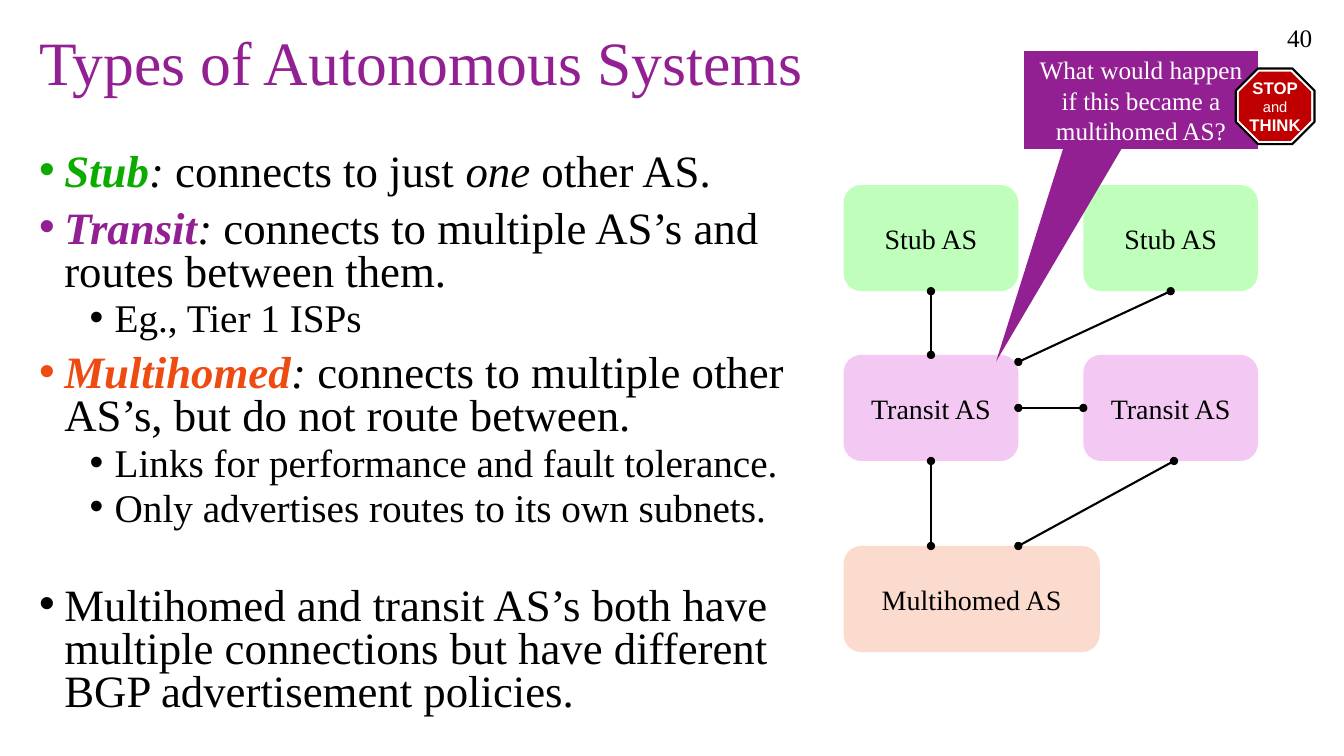
from pptx import Presentation
from pptx.dml.color import RGBColor
from pptx.enum import shapes, text
from pptx.oxml.ns import qn
from pptx.util import Pt
from lxml import etree

COLORS = {
    "black": "000000", "white": "FFFFFF", "purple": "932092",
    "green": "0CAB00", "orange": "ED4B11", "red": "C00000",
    "stub": "C0FFBB", "transit": "F3C9F3", "multihomed": "FCDBCF",
}
SERIF, SANS = "Times New Roman", "Arial"
SHAPE = shapes.MSO_SHAPE
ALIGN = text.PP_ALIGN

# (level, space before, runs); a run is (text, colour, bold, italic)
BULLETS = [
    (0, 10, [("Stub", "green", True, True), (":", "black", False, True),
             (" connects to just ", "black", False, False),
             ("one", "black", False, True),
             (" other AS.", "black", False, False)]),
    (0, 10, [("Transit", "purple", True, True), (": ", "black", False, True),
             ("connects to multiple AS’s and routes between them.",
              "black", False, False)]),
    (1, 5, [("Eg., Tier 1 ISPs", "black", False, False)]),
    (0, 10, [("Multihomed", "orange", True, True), (": ", "black", False, True),
             ("connects to multiple other AS’s, but do not route between.",
              "black", False, False)]),
    (1, 5, [("Links for performance and fault tolerance.",
             "black", False, False)]),
    (1, 5, [("Only advertises routes to its own subnets.",
             "black", False, False)]),
    (0, 41, [("Multihomed and transit AS’s both have multiple connections "
              "but have different BGP advertisement policies.",
              "black", False, False)]),
]


def rgb(name):
    return RGBColor.from_string(COLORS[name])


def add_run(p, words, size, color="black", bold=False, italic=False, font=SERIF):
    r = p.add_run()
    r.text = words
    f = r.font
    f.name, f.size, f.bold, f.italic = font, Pt(size), bold, italic
    f.color.rgb = rgb(color)


def add_textbox(s, box, anchor=text.MSO_ANCHOR.MIDDLE):
    tf = s.shapes.add_textbox(*map(Pt, box)).text_frame
    tf.word_wrap = True
    tf.vertical_anchor = anchor
    return tf


def add_filled(s, kind, box, fill, line=None):
    sp = s.shapes.add_shape(kind, *map(Pt, box))
    sp.shadow.inherit = False
    sp.fill.solid()
    sp.fill.fore_color.rgb = rgb(fill)
    if line:
        sp.line.color.rgb = rgb(line)
        sp.line.width = Pt(1.5)
    else:
        sp.line.fill.background()
    return sp


def add_label(sp, words, size, color="black"):
    tf = sp.text_frame
    tf.word_wrap = True
    tf.vertical_anchor = text.MSO_ANCHOR.MIDDLE
    p = tf.paragraphs[0]
    p.alignment = ALIGN.CENTER
    add_run(p, words, size, color)


def add_link(s, start, end):
    """Draw a line with a dot at each end."""
    c = s.shapes.add_connector(shapes.MSO_CONNECTOR.STRAIGHT,
                               *map(Pt, (*start, *end)))
    c.line.color.rgb = rgb("black")
    c.line.width = Pt(1.5)
    ln = c.line._get_or_add_ln()
    for tag in ("a:headEnd", "a:tailEnd"):
        etree.SubElement(ln, qn(tag), type="oval")
    etree.SubElement(c._element.spPr, qn("a:effectLst"))


def set_bullet(p, level, color):
    pPr = p._p.get_or_add_pPr()
    pPr.set("marL", str(Pt(18 + 36 * level)))
    pPr.set("indent", str(Pt(-18)))
    clr = etree.SubElement(pPr, qn("a:buClr"))
    etree.SubElement(clr, qn("a:srgbClr"), val=COLORS[color])
    etree.SubElement(pPr, qn("a:buFont"), typeface=SANS)
    etree.SubElement(pPr, qn("a:buChar"), char="•")


def add_page_number(s, box):
    p = add_textbox(s, box, text.MSO_ANCHOR.TOP).paragraphs[0]
    p.alignment = ALIGN.RIGHT
    add_run(p, "40", 18)


def add_title(s, box):
    p = add_textbox(s, box).paragraphs[0]
    p.line_spacing = 0.9
    add_run(p, "Types of Autonomous Systems", 44, "purple")


def add_body(s, box):
    tf = add_textbox(s, box)
    for i, (level, before, runs) in enumerate(BULLETS):
        p = tf.add_paragraph() if i else tf.paragraphs[0]
        p.level = level
        p.line_spacing = 0.8
        p.space_before = Pt(before)
        set_bullet(p, level, runs[0][1])
        for words, color, bold, italic in runs:
            add_run(p, words, 28 if level else 32, color, bold, italic)


def add_network(s, box):
    """Lay out the systems on two columns and three rows, then link them."""
    x, y, w, h = box
    node_w, node_h = 124.8, 75.8
    right = x + w - node_w
    transit_y, multi_y = y + 121.3, y + h - node_h
    nodes = [
        ("Stub AS", "stub", x, y, node_w),
        ("Stub AS", "stub", right, y, node_w),
        ("Transit AS", "transit", x, transit_y, node_w),
        ("Transit AS", "transit", right, transit_y, node_w),
        ("Multihomed AS", "multihomed", x, multi_y, 183),
    ]
    for words, fill, left, top, width in nodes:
        sp = add_filled(s, SHAPE.ROUNDED_RECTANGLE,
                        (left, top, width, node_h), fill)
        add_label(sp, words, 20)

    mid, edge, right_mid = x + node_w / 2, x + node_w, right + node_w / 2
    stub_base, transit_base = y + node_h, transit_y + node_h
    transit_mid = transit_y + node_h / 2
    for start, end in [
        ((mid, stub_base), (mid, transit_y)),
        ((right_mid, stub_base), (edge, transit_y + 5)),
        ((right, transit_mid), (edge, transit_mid)),
        ((mid, transit_base), (mid, multi_y)),
        ((right_mid + 2.4, transit_base), (edge, multi_y)),
    ]:
        add_link(s, start, end)


def add_question(s, box):
    sp = add_filled(s, SHAPE.RECTANGULAR_CALLOUT, box, "purple")
    sp.adjustments[0], sp.adjustments[1] = -0.62, 2.677
    add_label(sp, "What would happen if this became a multihomed AS?",
              18, "white")


def add_stop_sign(s, box):
    x, y, w, h = box
    add_filled(s, SHAPE.OCTAGON, box, "white", "black")
    add_filled(s, SHAPE.OCTAGON, (x + 2.3, y + 2.3, w - 4.6, h - 4.6), "red")
    tf = add_textbox(s, box)
    tf.margin_left = tf.margin_right = tf.margin_top = tf.margin_bottom = 0
    for i, (words, size, bold) in enumerate(
            [("STOP", 12, True), ("and", 10.5, False), ("THINK", 12, True)]):
        p = tf.add_paragraph() if i else tf.paragraphs[0]
        p.alignment = ALIGN.CENTER
        add_run(p, words, size, "white", bold, font=SANS)


def main():
    prs = Presentation()
    prs.slide_width, prs.slide_height = Pt(960), Pt(540)
    s = prs.slides.add_slide(prs.slide_layouts[6])
    add_page_number(s, (897, 12.5, 47.5, 29))
    add_title(s, (20.9, 12.2, 916.6, 69.8))
    add_body(s, (20.9, 90, 551.5, 440.6))
    add_network(s, (602.6, 132.2, 296, 333.6))
    add_question(s, (731.5, 36.6, 167, 69.8))
    add_stop_sign(s, (882.7, 48.9, 56.2, 54))
    prs.save("out.pptx")


if __name__ == "__main__":
    main()
